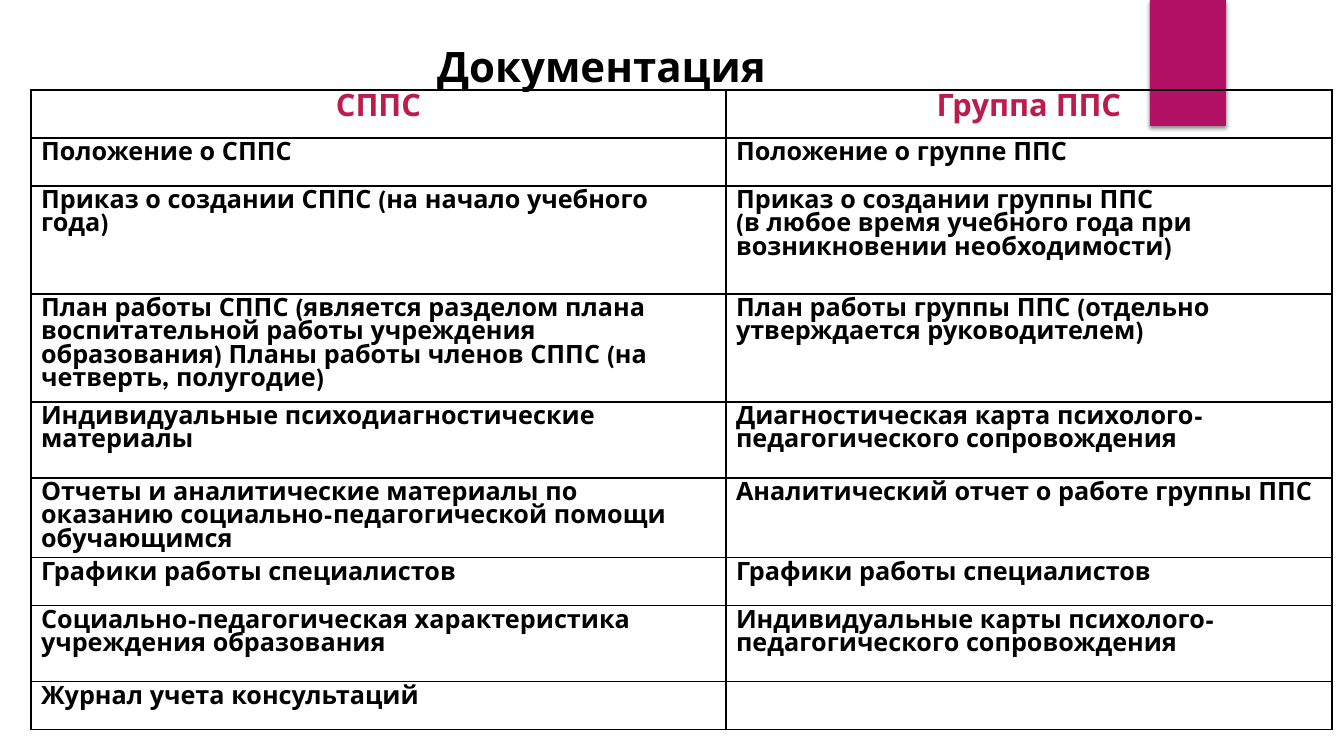
from lxml import etree
from pptx import Presentation
from pptx.dml.color import RGBColor
from pptx.enum import shapes, text
from pptx.oxml import ns
from pptx.util import Pt

# Content
TITLE = "Документация"
HEADER = ("СППС", "Группа ППС")
# Row height in px, then the two cells
ROWS = [
    (48, "Положение о СППС", "Положение о группе ППС"),
    (108, "Приказ о создании СППС (на начало учебного года)",
     "Приказ о создании группы ППС\n"
     "(в любое время учебного года при возникновении необходимости)"),
    (108, "План работы СППС (является разделом плана воспитательной работы "
     "учреждения образования) Планы работы членов СППС (на четверть, полугодие)",
     "План работы группы ППС (отдельно утверждается руководителем)"),
    (76, "Индивидуальные психодиагностические материалы",
     "Диагностическая карта психолого-педагогического сопровождения"),
    (76, "Отчеты и аналитические материалы по оказанию "
     "социально-педагогической помощи обучающимся",
     "Аналитический отчет о работе группы ППС"),
    (48, "Графики работы специалистов", "Графики работы специалистов"),
    (76, "Социально-педагогическая характеристика учреждения образования",
     "Индивидуальные карты психолого-педагогического сопровождения"),
    (48, "Журнал учета консультаций", ""),
]
HEADER_HEIGHT = 48
COLUMN_WIDTHS = (695, 606)
TABLE_LEFT, TABLE_TOP = 31, 90

FONT = "League Spartan"
BLACK = RGBColor(0x00, 0x00, 0x00)
CRIMSON = RGBColor(0xBD, 0x1B, 0x4C)
MAGENTA = RGBColor(0xB3, 0x11, 0x66)


def px(n):
    return round(n * 914400 / 100.8)


def put_text(tf, content, size=18, color=BLACK, align=text.PP_ALIGN.LEFT):
    tf.word_wrap = True
    for i, line in enumerate(content.split("\n")):
        p = tf.paragraphs[0] if i == 0 else tf.add_paragraph()
        p.alignment = align
        p.font.size = Pt(size)
        if line:
            r = p.add_run()
            r.text = line
            r.font.name = FONT
            r.font.size = Pt(size)
            r.font.bold = True
            r.font.color.rgb = color


def set_borders(cell, bottom=1, top=1):
    tc_pr = cell._tc.get_or_add_tcPr()
    widths = {"lnL": 1, "lnR": 1, "lnT": top, "lnB": bottom}
    for i, (tag, width) in enumerate(widths.items()):
        ln = etree.Element(ns.qn("a:" + tag), w=str(Pt(width)))
        fill = etree.SubElement(ln, ns.qn("a:solidFill"))
        etree.SubElement(fill, ns.qn("a:srgbClr"), val=str(BLACK))
        tc_pr.insert(i, ln)


def add_soft_shadow(sp):
    effects = sp._element.spPr.find(ns.qn("a:effectLst"))
    shadow = etree.SubElement(effects, ns.qn("a:outerShdw"), blurRad=str(Pt(3)),
                              dist=str(Pt(2)), dir="5400000", rotWithShape="0")
    color = etree.SubElement(shadow, ns.qn("a:srgbClr"), val=str(BLACK))
    etree.SubElement(color, ns.qn("a:alpha"), val="45000")


prs = Presentation()
prs.slide_width, prs.slide_height = px(1344), px(756)
slide = prs.slides.add_slide(prs.slide_layouts[6])

# Corner ribbon
sp = slide.shapes.add_shape(shapes.MSO_SHAPE.RECTANGLE,
                            px(1150), 0, px(76), px(126))
sp.fill.solid()
sp.fill.fore_color.rgb = MAGENTA
sp.line.fill.background()
sp.shadow.inherit = False
add_soft_shadow(sp)

# Table of documents
heights = [HEADER_HEIGHT] + [row[0] for row in ROWS]
cells = [HEADER] + [row[1:] for row in ROWS]
table = slide.shapes.add_table(len(cells), len(HEADER), px(TABLE_LEFT), px(TABLE_TOP),
                               px(sum(COLUMN_WIDTHS)), px(sum(heights))).table
table.first_row = table.horz_banding = False
for column, width in zip(table.columns, COLUMN_WIDTHS):
    column.width = px(width)
for i, (height, row) in enumerate(zip(heights, cells)):
    table.rows[i].height = px(height)
    for j, content in enumerate(row):
        cell = table.cell(i, j)
        cell.fill.background()
        if i == 0:
            put_text(cell.text_frame, content, size=22, color=CRIMSON,
                     align=text.PP_ALIGN.CENTER)
        else:
            put_text(cell.text_frame, content)
        set_borders(cell, bottom=2 if i == 0 else 1, top=2 if i == 1 else 1)

# Title
tf = slide.shapes.add_textbox(px(53), px(22), px(1097), px(59)).text_frame
tf.margin_top, tf.margin_bottom = px(19), 0
put_text(tf, TITLE, size=30, align=text.PP_ALIGN.CENTER)

prs.save("out.pptx")
